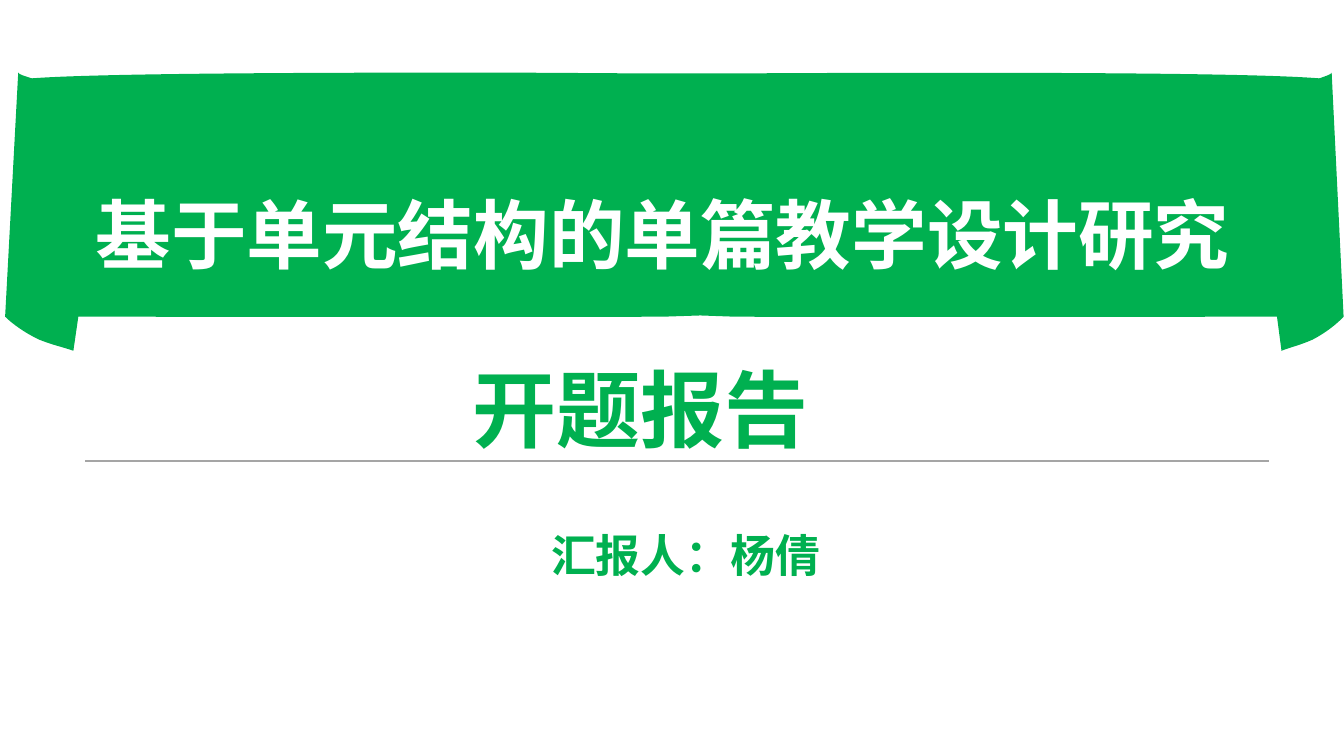
from pptx import Presentation
from pptx import util as u
from pptx.dml.color import RGBColor
from pptx.enum import shapes, text
from pptx.oxml.ns import qn
from lxml import etree

GREEN, WHITE, GREY = "00B050", "FFFFFF", "A5A5A5"
FONT = "Noto Sans CJK SC"


def paint(color, value):
    color.rgb = RGBColor.from_string(value)


prs = Presentation()
prs.slide_width, prs.slide_height = u.Cm(33.87), u.Cm(19.05)
s = prs.slides.add_slide(prs.slide_layouts[6])

band = [
    [(12.01, 1.83)],
    [(13.77, 1.83), (15.37, 1.85), (16.51, 1.85)],
    [(17.65, 1.85)],
    [(18.69, 1.85)],
    [(22.43, 1.83), (31.29, 1.8), (33.3, 1.98)],
    [(33.4, 1.98), (33.55, 1.96), (33.55, 2.08)],
    [(32.44, 7.98)],
    [(31.22, 7.98), (21.89, 8), (18.49, 7.98)],
    [(17.65, 7.95)],
    [(16.74, 7.98)],
    [(13.06, 8), (3, 7.98), (1.7, 7.98)],
    [(0.46, 2.08)],
    [(0.48, 1.96), (0.66, 1.98), (0.74, 1.98)],
    [(2.31, 1.85), (7.62, 1.83), (12.01, 1.83)],
]
left_curl = [
    [(0.46, 1.83)],
    [(0.48, 1.88), (0.61, 1.91), (0.81, 1.98)],
    [(1.02, 2.03), (1.91, 2.34), (1.96, 2.59)],
    [(2.16, 6.71)],
    [(1.85, 8.84)],
    [(1.57, 8.74), (1.37, 8.71), (0.99, 8.56)],
    [(0.61, 8.38), (0.3, 8.15), (0.13, 7.98)],
]
right_curl = [[(33.86 - 0.91 * (x - 0.13), y) for x, y in seg] for seg in left_curl]

banner = s.shapes.add_group_shape()
for outline in (band, left_curl, right_curl):
    pts = [(u.Cm(x), u.Cm(y)) for seg in outline for x, y in seg]
    fb = banner.shapes.build_freeform(*pts[0])
    fb.add_line_segments(pts[1:], close=True)
    sp = fb.convert_to_shape()
    lines = iter(list(sp._element.iter(qn("a:lnTo"))))
    for seg in outline[1:]:
        first, *others = [next(lines) for _ in seg]
        if others:
            first.tag = qn("a:cubicBezTo")
            for line in others:
                first.append(line[0])
                line.getparent().remove(line)
    sp.shadow.inherit = False
    sp.fill.solid()
    paint(sp.fill.fore_color, GREEN)
    sp.line.fill.background()

rule = s.shapes.add_connector(
    shapes.MSO_CONNECTOR.STRAIGHT, u.Cm(2.15), u.Cm(11.61), u.Cm(31.98), u.Cm(11.61))
paint(rule.line.color, GREY)
rule.line.width = u.Pt(1.75)
etree.SubElement(rule._element.spPr, qn("a:effectLst"))

TOP, BOTTOM = text.MSO_ANCHOR.TOP, text.MSO_ANCHOR.BOTTOM
LEFT, CENTER = text.PP_ALIGN.LEFT, text.PP_ALIGN.CENTER
FIXED, GROW = text.MSO_AUTO_SIZE.NONE, text.MSO_AUTO_SIZE.SHAPE_TO_FIT_TEXT
for words, box, size, color, anchor, align, wrap, spacing, fit in (
    ("基于单元结构的单篇教学设计研究", (2.16, 1.61, 33.48, 5.56), 54, WHITE, BOTTOM, LEFT, True, 0.9, FIXED),
    ("汇报人：杨倩", (13.64, 13.18, 18.64, 1.63), 32, GREEN, TOP, LEFT, True, 1.0, GROW),
    ("开题报告", (11.64, 8.89, 8.99, 2.82), 60, GREEN, TOP, CENTER, False, 1.0, GROW),
):
    tf = s.shapes.add_textbox(*map(u.Cm, box)).text_frame
    tf.auto_size = fit
    tf.word_wrap = wrap
    tf.vertical_anchor = anchor
    p = tf.paragraphs[0]
    p.alignment = align
    p.line_spacing = spacing
    r = p.add_run()
    r.text = words
    r.font.size = u.Pt(size)
    r.font.bold = True
    r.font.name = FONT
    paint(r.font.color, color)
    etree.SubElement(r.font._element, qn("a:ea"), typeface=FONT)

prs.save("out.pptx")
